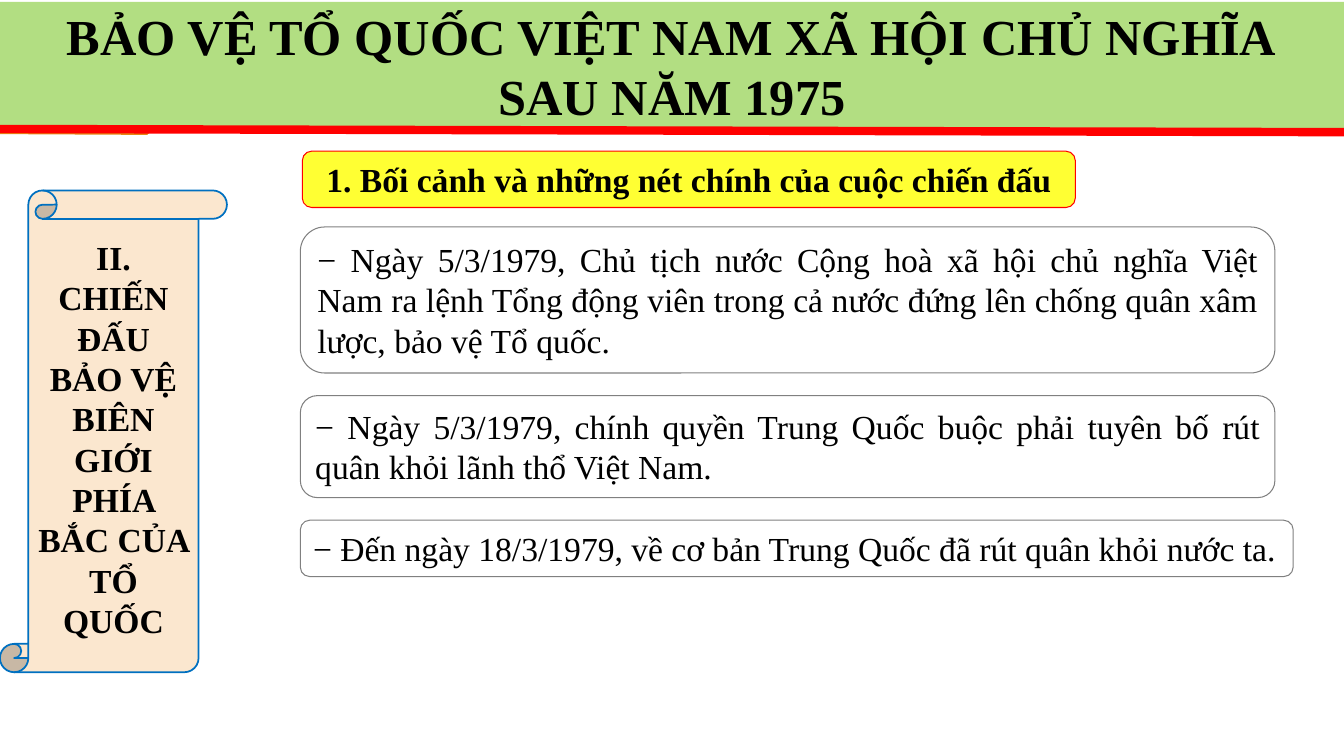
import pptx
import pptx.util
import pptx.dml.color
import pptx.enum.shapes
import pptx.enum.text
import pptx.oxml.ns
import lxml.etree

Cm = pptx.util.Cm
Shape = pptx.enum.shapes.MSO_SHAPE
Align = pptx.enum.text.PP_ALIGN
Anchor = pptx.enum.text.MSO_ANCHOR
Fit = pptx.enum.text.MSO_AUTO_SIZE
WIDE, HIGH = 33.87, 19.05


def color(code):
    return pptx.dml.color.RGBColor.from_string(code)


class Deck:
    """Holds the text style and the current slide."""

    def __init__(self, slide):
        self.slide = slide
        self.style = {"name": "Times New Roman", "size": pptx.util.Pt(24), "bold": False}

    def paint(self, shape, fill=None, line=None, width=0.75):
        shape.shadow.inherit = False
        if fill:
            shape.fill.solid()
            shape.fill.fore_color.rgb = color(fill)
        else:
            shape.fill.background()
        if line:
            shape.line.color.rgb = color(line)
            shape.line.width = pptx.util.Pt(width)
        else:
            shape.line.fill.background()

    def label(self, shape, lines, align, **extra):
        frame = shape.text_frame
        for row, text in enumerate(lines):
            para = frame.add_paragraph() if row else frame.paragraphs[0]
            para.alignment = align
            run = para.add_run()
            run.text = text
            for key, value in {**self.style, **extra}.items():
                setattr(run.font, key, value)
            run.font.color.rgb = color("000000")

    def box(self, kind, place, lines, align=Align.CENTER, grow=False, look=None, **extra):
        shape = self.slide.shapes.add_shape(kind, *map(Cm, place))
        self.paint(shape, **(look or {}))
        frame = shape.text_frame
        frame.word_wrap = True
        frame.vertical_anchor = Anchor.TOP if grow else Anchor.MIDDLE
        frame.auto_size = Fit.SHAPE_TO_FIT_TEXT if grow else Fit.NONE
        self.label(shape, lines, align, **extra)

    def tag(self, points, fill):
        first, *rest = [(Cm(x), Cm(y)) for x, y in points]
        form = self.slide.shapes.build_freeform(*first)
        form.add_line_segments(rest, close=True)
        self.paint(form.convert_to_shape(), fill)

    def rule(self, ends, line, width):
        kind = pptx.enum.shapes.MSO_CONNECTOR.STRAIGHT
        rule = self.slide.shapes.add_connector(kind, *map(Cm, ends))
        rule.line.color.rgb = color(line)
        rule.line.width = pptx.util.Pt(width)
        lxml.etree.SubElement(rule._element.spPr, pptx.oxml.ns.qn("a:effectLst"))


def main():
    show = pptx.Presentation()
    show.slide_width, show.slide_height = Cm(WIDE), Cm(HIGH)
    deck = Deck(show.slides.add_slide(show.slide_layouts[6]))

    deck.tag([(0, 1.98), (3.71, 1.98), (4.42, 2.69), (3.71, 3.4), (0, 3.38)], "E78712")
    title = ["BẢO VỆ TỔ QUỐC VIỆT NAM XÃ HỘI CHỦ NGHĨA", "SAU NĂM 1975"]
    deck.box(Shape.RECTANGLE, (0, 0.05, WIDE, 3.2), title,
             look={"fill": "B2DE82"}, size=pptx.util.Pt(36), bold=True)
    deck.rule((0, 3.25, WIDE, 3.33), "FF0000", 6)
    deck.box(Shape.ROUNDED_RECTANGLE, (7.62, 3.81, 19.48, 1.42),
             ["1. Bối cảnh và những nét chính của cuộc chiến đấu"],
             grow=True, look={"fill": "FFFF33", "line": "FF0000"}, bold=True)
    deck.box(Shape.VERTICAL_SCROLL, (0, 4.8, 5.72, 12.14),
             ["II. CHIẾN ĐẤU BẢO VỆ BIÊN GIỚI PHÍA BẮC CỦA TỔ QUỐC"],
             look={"fill": "FBE7CF", "line": "0070C0", "width": 1.25}, bold=True)

    notes = [
        (24.56, 3.68, "− Ngày 5/3/1979, Chủ tịch nước Cộng hoà xã hội chủ nghĩa Việt Nam "
                      "ra lệnh Tổng động viên trong cả nước đứng lên chống quân xâm lược, "
                      "bảo vệ Tổ quốc."),
        (24.56, 2.57, "− Ngày 5/3/1979, chính quyền Trung Quốc buộc phải tuyên bố "
                      "rút quân khỏi lãnh thổ Việt Nam."),
        (25.02, 1.42, "− Đến ngày 18/3/1979, về cơ bản Trung Quốc đã rút quân khỏi nước ta."),
    ]
    top, gap = 5.72, 0.57
    for width, height, text in notes:
        deck.box(Shape.ROUNDED_RECTANGLE, (7.57, top, width, height), [text],
                 align=Align.JUSTIFY, grow=True, look={"line": "808080"})
        top += height + gap

    show.save("out.pptx")


if __name__ == "__main__":
    main()
